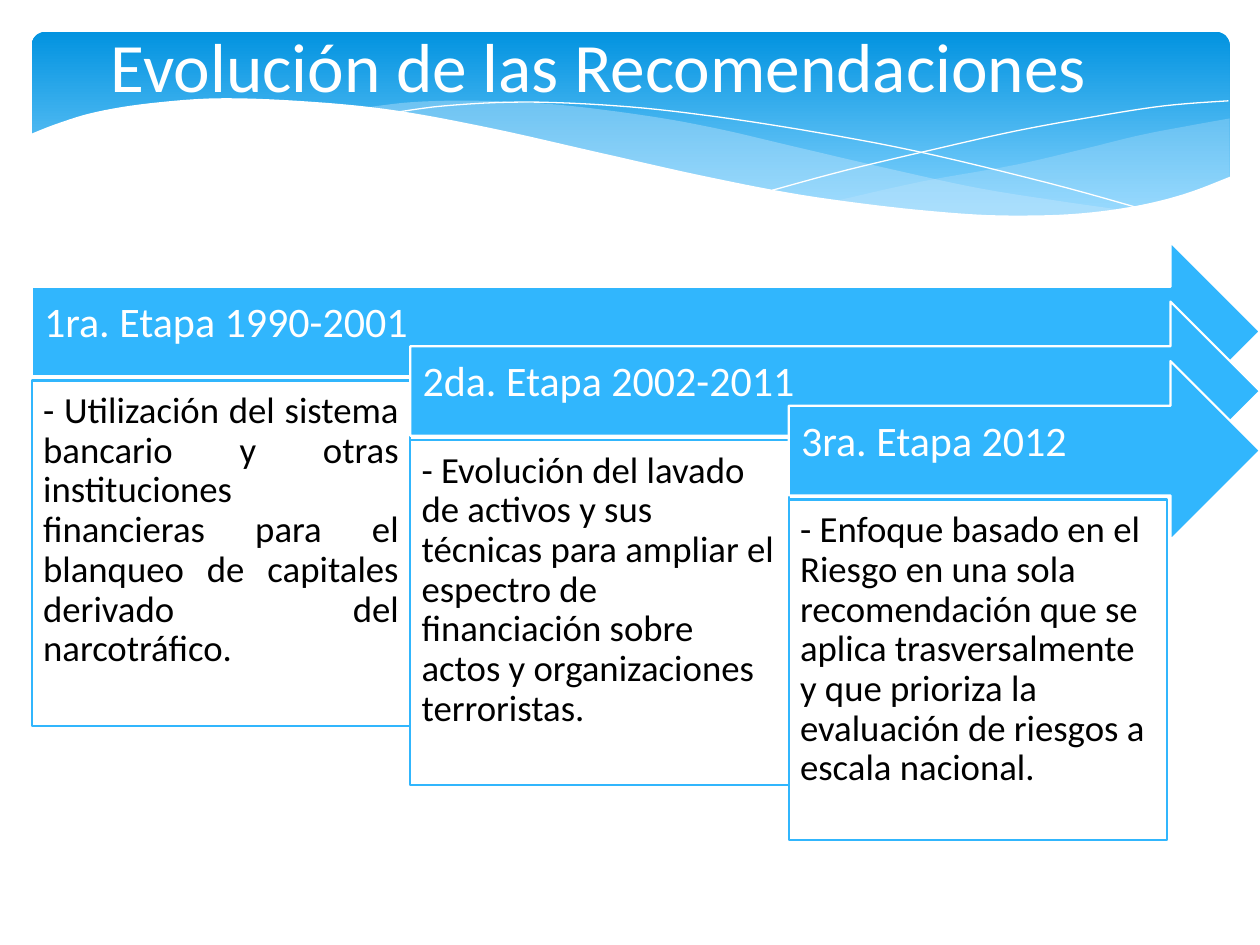
from lxml import etree
from pptx import Presentation
from pptx.dml.color import RGBColor
from pptx.enum.shapes import MSO_SHAPE
from pptx.enum.text import MSO_ANCHOR, PP_ALIGN
from pptx.oxml.ns import qn
from pptx.util import Cm, Pt

ROUND, ARROW, RECT = MSO_SHAPE.ROUNDED_RECTANGLE, MSO_SHAPE.RIGHT_ARROW, MSO_SHAPE.RECTANGLE
TOP, MIDDLE = MSO_ANCHOR.TOP, MSO_ANCHOR.MIDDLE
LEFT, CENTER, JUSTIFY = PP_ALIGN.LEFT, PP_ALIGN.CENTER, PP_ALIGN.JUSTIFY

FONT = "Calibri"
WHITE, BLACK, BLUE, PALE = "FFFFFF", "000000", "31B6FD", "C6E7FC"
UNIT = Cm(0.0254)  # wave points are counted in this unit

# Each wave: curve points, straight corner points, opacity in percent
BACK = ([(661, 160), (732, 144), (805, 131), (861, 118), (906, 107), (948, 99), (976, 94)],
        [(976, 141), (949, 152), (921, 160), (889, 166), (854, 170), (814, 172),
         (769, 171), (719, 167)], 29)
FRONT = ([(286, 86), (328, 81), (380, 80), (442, 83), (514, 92), (569, 102), (629, 116),
          (706, 134), (775, 149), (837, 159), (893, 167)],
         [(857, 171), (818, 173), (773, 172), (722, 168), (665, 161), (601, 150),
          (530, 135), (449, 116), (404, 106), (362, 97), (323, 90)], 40)
COVER = ([(23, 107), (46, 98), (76, 89), (119, 82), (177, 78), (250, 81), (316, 88),
          (391, 102), (475, 121), (555, 139), (626, 153), (688, 162), (744, 168),
          (793, 171), (850, 170), (899, 164), (940, 154), (977, 140)],
         [(977, 224), (23, 224)], 100)
LINES = [
    [(309, 90), (353, 84), (416, 81), (489, 84), (556, 91), (636, 103), (727, 120),
     (831, 145), (907, 166)],
    [(613, 151), (672, 135), (748, 117), (806, 104), (866, 93), (924, 84), (975, 80)],
]

STAGES = [
    ("1ra. Etapa 1990-2001", 6.96, JUSTIFY,
     "- Utilización del sistema bancario y otras instituciones financieras para el "
     "blanqueo de capitales derivado del narcotráfico."),
    ("2da. Etapa 2002-2011", 6.96, LEFT,
     "- Evolución del lavado de activos y sus técnicas para ampliar el espectro de "
     "financiación sobre actos y organizaciones terroristas."),
    ("3ra. Etapa 2012", 6.86, LEFT,
     "- Enfoque basado en el Riesgo en una sola recomendación que se aplica "
     "trasversalmente y que prioriza la evaluación de riesgos a escala nacional."),
]


def color(code):
    return RGBColor.from_string(code)


def paint(shape, fill=None, line=None, width=0.0):
    """Set solid fill and outline; None leaves either one out."""
    shape.shadow.inherit = False
    if fill:
        shape.fill.solid()
        shape.fill.fore_color.rgb = color(fill)
    else:
        shape.fill.background()
    if line:
        shape.line.color.rgb = color(line)
        shape.line.width = Pt(width)
    else:
        shape.line.fill.background()


def write(shape, text, size, ink, align, anchor, pads, lead=0.9):
    """Fill the frame; pads are left, top, right and bottom in cm."""
    frame = shape.text_frame
    frame.word_wrap = True
    frame.vertical_anchor = anchor
    (frame.margin_left, frame.margin_top,
     frame.margin_right, frame.margin_bottom) = map(Cm, pads)
    para = frame.paragraphs[0]
    para.text = text
    para.alignment = align
    para.line_spacing = lead
    para.font.name = FONT
    para.font.size = Pt(size)
    para.font.color.rgb = color(ink)


def smooth(points, steps=6):
    """Run a Catmull-Rom curve through the points."""
    ends = [points[0], *points, points[-1]]
    curve = [points[0]]
    for a, b, c, d in zip(ends, ends[1:], ends[2:], ends[3:]):
        for step in range(1, steps + 1):
            t = step / steps
            curve.append(tuple(
                (2 * q + (r - p) * t + (2 * p - 5 * q + 4 * r - s) * t ** 2
                 + (3 * q - p - 3 * r + s) * t ** 3) / 2
                for p, q, r, s in zip(a, b, c, d)))
    return curve


def trace(shapes, points, close):
    # Whole EMU keep the curve free of rounding steps
    dots = [(round(x * UNIT), round(y * UNIT)) for x, y in points]
    path = shapes.build_freeform(*dots[0])
    path.add_line_segments(dots[1:], close=close)
    return path.convert_to_shape()


def add_wave(shapes, curve, rest, alpha, fill):
    shape = trace(shapes, smooth(curve) + rest, True)
    paint(shape, fill)
    if alpha < 100:
        tint = shape.element.spPr.find(qn("a:solidFill")).find(qn("a:srgbClr"))
        etree.SubElement(tint, qn("a:alpha")).set("val", str(alpha * 1000))


def add_banner(shapes):
    band = shapes.add_shape(ROUND, Cm(0.64), Cm(0.64), Cm(24.15), Cm(3.96))
    band.adjustments[0] = 0.07
    paint(band)
    band.fill.gradient()
    band.fill.gradient_angle = 270
    for stop, place, code in zip(band.fill.gradient_stops, (0, 0.9), ("0293E0", "83D3FE")):
        stop.position = place
        stop.color.rgb = color(code)
    add_wave(shapes, *BACK, PALE)
    add_wave(shapes, *FRONT, PALE)
    for points in LINES:
        paint(trace(shapes, smooth(points), False), line=WHITE)
    add_wave(shapes, *COVER, WHITE)


def add_title(shapes, text):
    box = shapes.add_textbox(Cm(0.64), Cm(-0.43), Cm(22.86), Cm(3.48))
    write(box, text, 39.6, WHITE, CENTER, MIDDLE, (0.25, 0.13, 0.25, 0.13), 1.0)


def add_stage(shapes, left, top, head, tall, align, body):
    arrow = shapes.add_shape(ARROW, Cm(left), Cm(top), Cm(25.4 - left), Cm(3.61))
    paint(arrow, BLUE, WHITE, 1.25)
    write(arrow, head, 24, WHITE, LEFT, MIDDLE, (0.25, 0.25, 0.71, 0.58))
    box = shapes.add_shape(RECT, Cm(left), Cm(top + 2.79), Cm(7.63), Cm(tall))
    paint(box, WHITE, BLUE, 1.25)
    write(box, body, 21, BLACK, align, TOP, (0.23,) * 4)


def main():
    deck = Presentation()
    deck.slide_width, deck.slide_height = Cm(25.4), Cm(19.05)
    shapes = deck.slides.add_slide(deck.slide_layouts[6]).shapes
    add_banner(shapes)
    add_title(shapes, "Evolución de las Recomendaciones")
    for i, stage in enumerate(STAGES):
        add_stage(shapes, 0.64 + 7.63 * i, 4.88 + 1.2 * i, *stage)
    deck.save("out.pptx")


if __name__ == "__main__":
    main()
